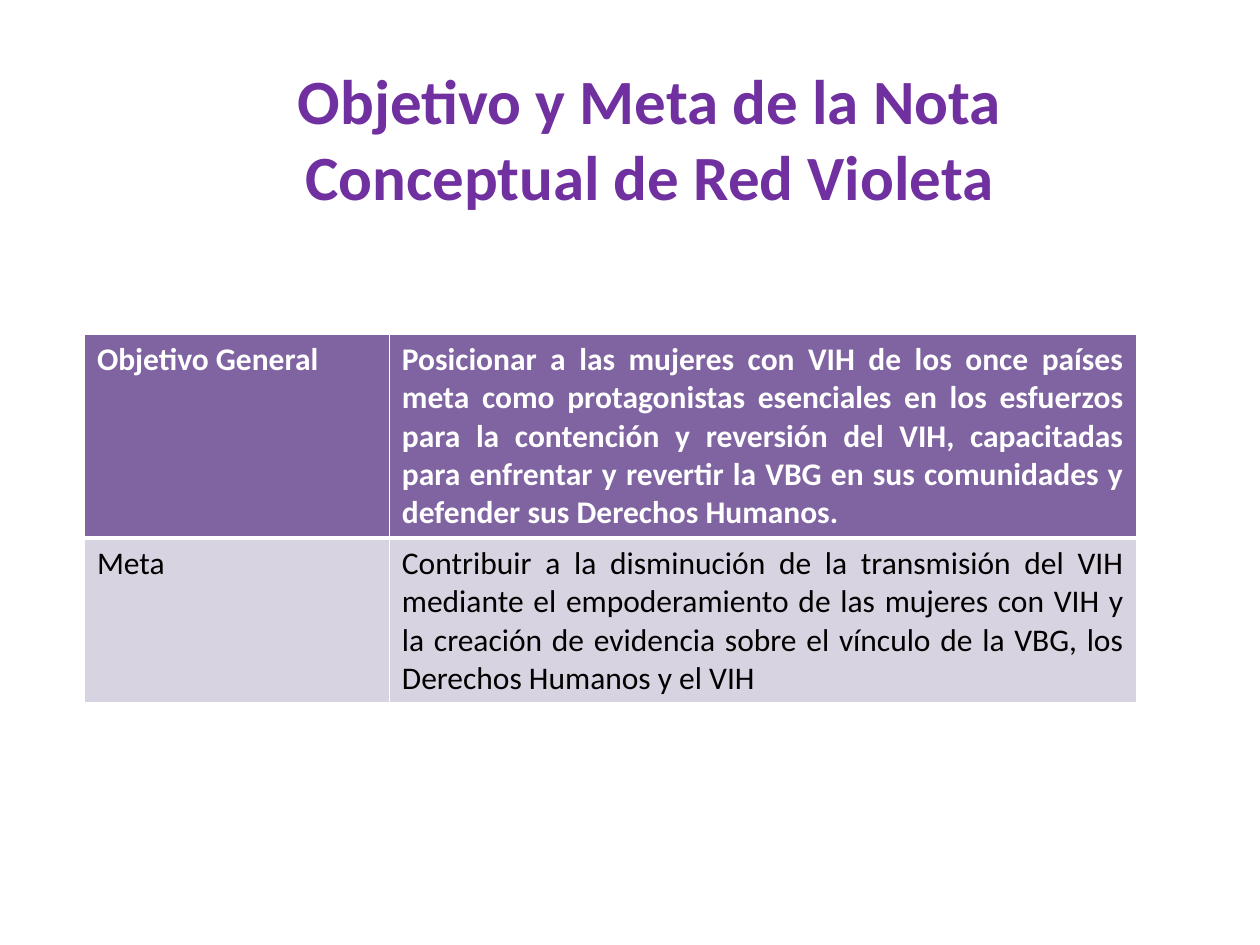
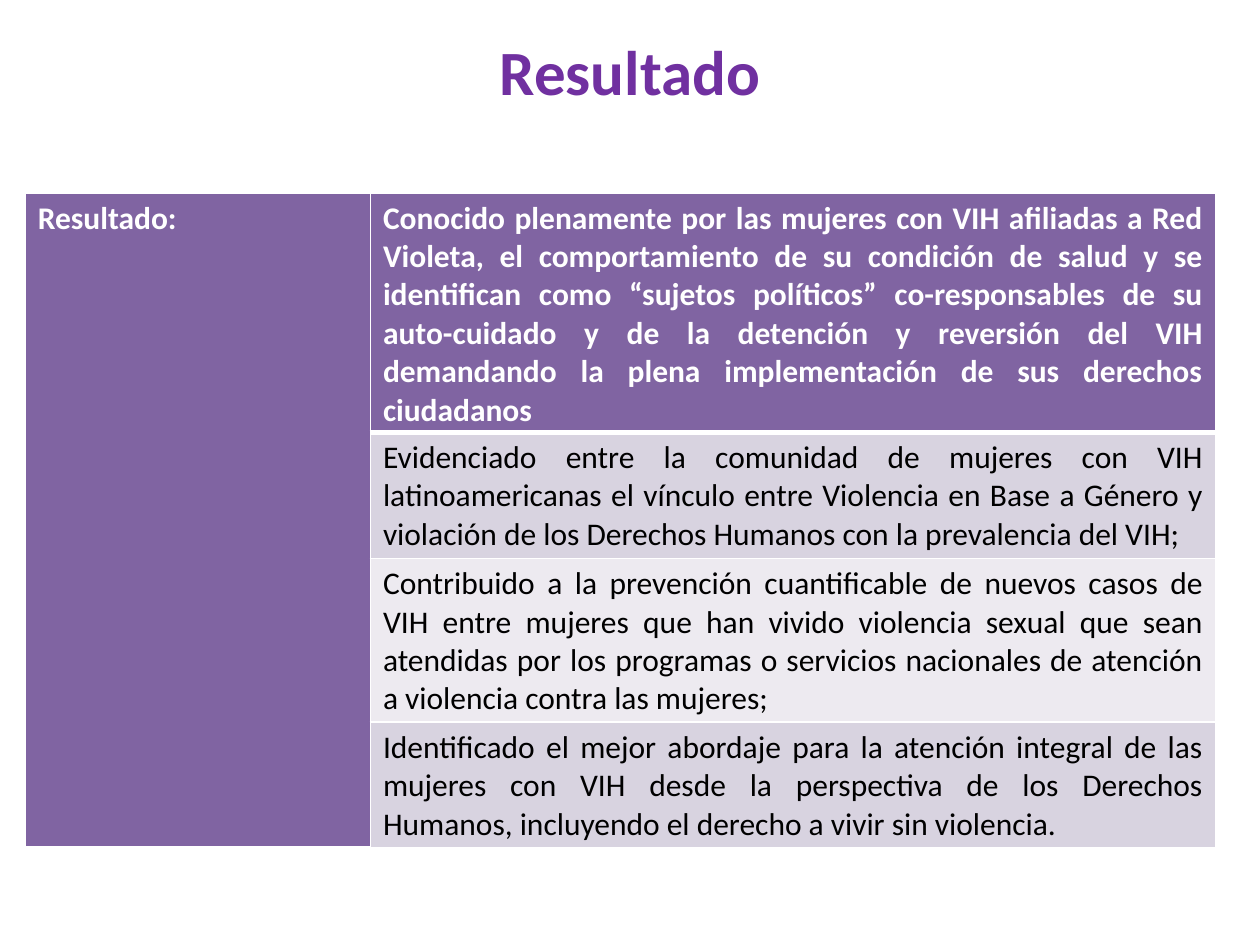
from dataclasses import dataclass

from lxml.etree import SubElement
from pptx import Presentation
from pptx.dml.color import RGBColor
from pptx.enum.text import MSO_ANCHOR, MSO_AUTO_SIZE, PP_ALIGN
from pptx.oxml.ns import qn
from pptx.util import Inches, Pt

FONT = "Calibri"
TITLE_PURPLE = "7030A0"
HEADER_PURPLE = "8064A2"
BANDS = ("D8D3E0", "EDEAF0")
WHITE = "FFFFFF"
BLACK = "000000"
TITLE_LAYOUT = 5
NETWORK = "Red Violeta"


@dataclass(frozen=True)
class Frame:
    left: float
    top: float
    width: float
    height: float


@dataclass(frozen=True)
class Row:
    label: str
    statement: str
    height: float


@dataclass(frozen=True)
class TablePage:
    title: str
    title_frame: Frame
    left: float
    top: float
    columns: tuple[float, float]
    rows: tuple[Row, ...]
    merge_labels: bool = False


PAGES = (
    TablePage(
        f"Objetivo y Meta de la Nota Conceptual de {NETWORK}",
        Frame(1.14, 0.44, 8.03, 1.31),
        0.67, 2.65, (2.42, 5.93),
        (
            Row("Objetivo General",
                "Posicionar a las mujeres con VIH de los once países meta como "
                "protagonistas esenciales en los esfuerzos para la contención y "
                "reversión del VIH, capacitadas para enfrentar y revertir la VBG "
                "en sus comunidades y defender sus Derechos Humanos.", 1.62),
            Row("Meta",
                "Contribuir a la disminución de la transmisión del VIH mediante el "
                "empoderamiento de las mujeres con VIH y la creación de evidencia "
                "sobre el vínculo de la VBG, los Derechos Humanos y el VIH", 1.31),
        ),
    ),
    TablePage(
        "Resultado",
        Frame(0, 0.21, 10, 0.71),
        0.2, 1.53, (2.74, 6.71),
        (
            Row("Resultado:",
                f"Conocido plenamente por las mujeres con VIH afiliadas a {NETWORK}, "
                "el comportamiento de su condición de salud y se identifican como "
                "“sujetos políticos” co-responsables de su auto-cuidado y de la "
                "detención y reversión del VIH demandando la plena implementación "
                "de sus derechos ciudadanos", 1.9),
            Row("",
                "Evidenciado entre la comunidad de mujeres con VIH latinoamericanas "
                "el vínculo entre Violencia en Base a Género y violación de los "
                "Derechos Humanos con la prevalencia del VIH;", 1.0),
            Row("",
                "Contribuido a la prevención cuantificable de nuevos casos de VIH "
                "entre mujeres que han vivido violencia sexual que sean atendidas "
                "por los programas o servicios nacionales de atención a violencia "
                "contra las mujeres;", 1.3),
            Row("",
                "Identificado el mejor abordaje para la atención integral de las "
                "mujeres con VIH desde la perspectiva de los Derechos Humanos, "
                "incluyendo el derecho a vivir sin violencia.", 1.0),
        ),
        merge_labels=True,
    ),
)


def color(value: str) -> RGBColor:
    return RGBColor.from_string(value)


def write(text_frame, text: str, size: int, hue: str, bold: bool, align) -> None:
    text_frame.text = text
    para = text_frame.paragraphs[0]
    para.alignment = align
    for span in para.runs:
        span.font.name = FONT
        span.font.size = Pt(size)
        span.font.bold = bold
        span.font.color.rgb = color(hue)


def add_title(page, text: str, frame: Frame) -> None:
    box = page.shapes.title
    box.left, box.top = Inches(frame.left), Inches(frame.top)
    box.width, box.height = Inches(frame.width), Inches(frame.height)
    box.text_frame.word_wrap = True
    box.text_frame.auto_size = MSO_AUTO_SIZE.SHAPE_TO_FIT_TEXT
    box.text_frame.vertical_anchor = MSO_ANCHOR.TOP
    write(box.text_frame, text, 36, TITLE_PURPLE, True, PP_ALIGN.CENTER)


def set_borders(cell, bottom: int, top: int) -> None:
    properties = cell._tc.get_or_add_tcPr()
    widths = {"a:lnL": 1, "a:lnR": 1, "a:lnT": top, "a:lnB": bottom}
    for tag, width in widths.items():
        line = SubElement(properties, qn(tag), w=str(Pt(width)))
        fill = SubElement(line, qn("a:solidFill"))
        SubElement(fill, qn("a:srgbClr"), val=WHITE)


def style_cell(cell, text: str, fill: str, header: bool, align,
               bottom: int, top: int) -> None:
    set_borders(cell, bottom, top)
    cell.fill.solid()
    cell.fill.fore_color.rgb = color(fill)
    write(cell.text_frame, text, 18, WHITE if header else BLACK, header, align)


def add_statement_table(page, content: TablePage) -> None:
    rows = content.rows
    table = page.shapes.add_table(
        len(rows), len(content.columns),
        Inches(content.left), Inches(content.top),
        Inches(sum(content.columns)), Inches(sum(row.height for row in rows)),
    ).table
    table.first_row = table.horz_banding = False
    for column, width in zip(table.columns, content.columns):
        column.width = Inches(width)
    for index, row in enumerate(rows):
        table.rows[index].height = Inches(row.height)
        header = index == 0
        fill = HEADER_PURPLE if header else BANDS[(index - 1) % len(BANDS)]
        label_fill = HEADER_PURPLE if content.merge_labels else fill
        bottom, top = (3 if header else 1), (3 if index == 1 else 1)
        style_cell(table.cell(index, 0), row.label, label_fill, header,
                   PP_ALIGN.LEFT, bottom, top)
        style_cell(table.cell(index, 1), row.statement, fill, header,
                   PP_ALIGN.JUSTIFY, bottom, top)
    if content.merge_labels:
        table.cell(0, 0).merge(table.cell(len(rows) - 1, 0))


def main() -> None:
    deck = Presentation()
    deck.slide_width, deck.slide_height = Inches(10), Inches(7.5)
    for content in PAGES:
        page = deck.slides.add_slide(deck.slide_layouts[TITLE_LAYOUT])
        add_statement_table(page, content)
        add_title(page, content.title, content.title_frame)
    deck.save("out.pptx")


if __name__ == "__main__":
    main()
